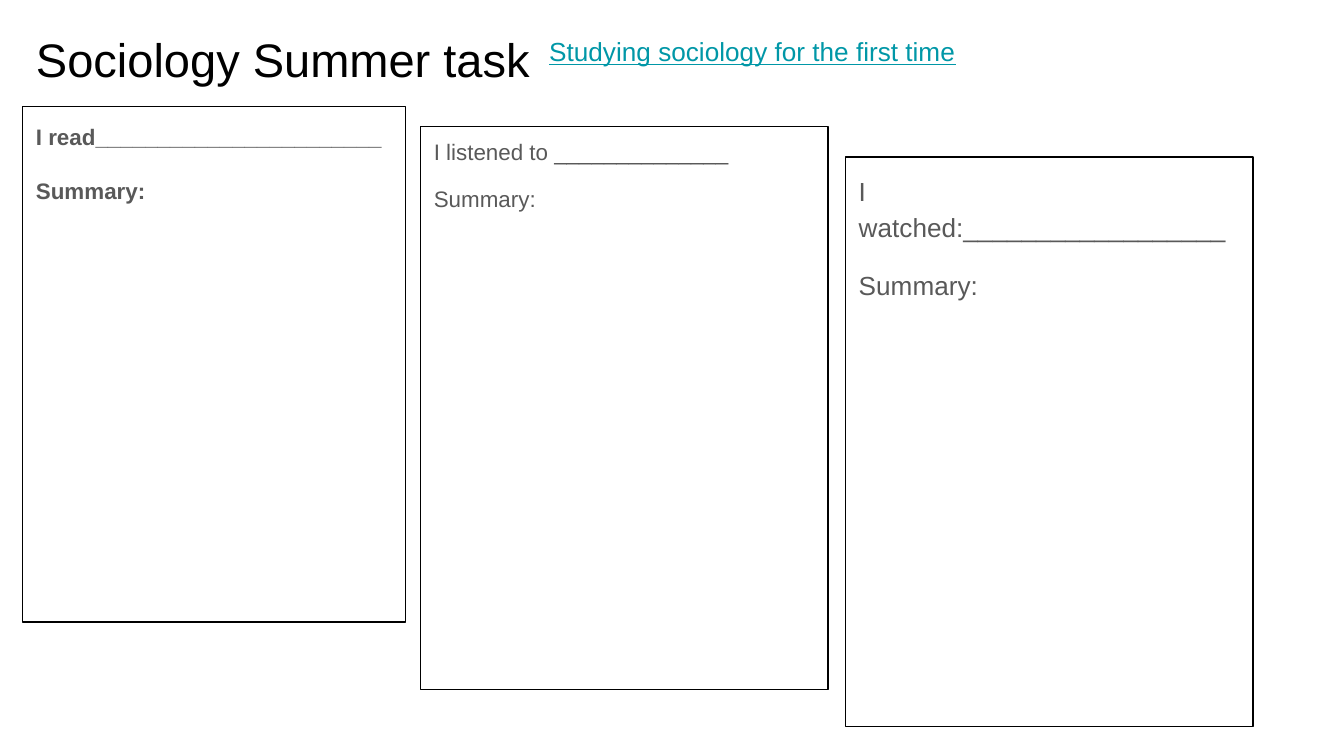
"""Build a summer task slide with three note boxes."""
from dataclasses import dataclass

from pptx import Presentation
from pptx.dml.color import RGBColor
from pptx.enum import shapes, text
from pptx.util import Cm, Pt


@dataclass(frozen=True)
class Theme:
    font: str = "Arial"
    black: str = "000000"
    grey: str = "595959"
    teal: str = "0097A7"
    white: str = "FFFFFF"
    title: float = 25.2
    large: float = 14
    small: float = 12
    gap: float = 12
    line: float = 0.75
    inset: float = 0.25


@dataclass(frozen=True)
class Box:
    left: float
    top: float
    width: float
    height: float


@dataclass(frozen=True)
class Note:
    box: Box
    prompt: str
    size: float
    pitch: float = 1.15
    after: float = 0
    bold: bool = False


THEME = Theme()
HEAD = Box(0.43, 0.33, 24.1, 0.79)
LINK = Box(10.13, 0.33, 11.89, 1.12)
NOTES = (
    Note(Box(0.43, 2.01, 7.24, 9.75), "I read" + "_" * 23,
         THEME.small, after=THEME.gap, bold=True),
    Note(Box(7.95, 2.39, 7.7, 10.64), "I listened to " + "_" * 14,
         THEME.small, pitch=0.95),
    Note(Box(15.98, 2.97, 7.7, 10.77), "I watched:" + "_" * 18, THEME.large),
)


def place(shape, box: Box) -> None:
    shape.left, shape.top = Cm(box.left), Cm(box.top)
    shape.width, shape.height = Cm(box.width), Cm(box.height)


def write(shape, words: str, size: float, color: str, bold: bool = False,
          line: bool = False, pitch: float = 1.0):
    frame = shape.text_frame
    frame.text = words
    frame.word_wrap = True
    frame.auto_size = text.MSO_AUTO_SIZE.NONE
    frame.vertical_anchor = text.MSO_ANCHOR.TOP
    frame.margin_left = frame.margin_right = Cm(THEME.inset)
    frame.margin_top = frame.margin_bottom = Cm(THEME.inset)
    for para in frame.paragraphs:
        para.alignment = text.PP_ALIGN.LEFT
        para.line_spacing = pitch
        para.space_before = para.space_after = Pt(0)
        for run in para.runs:
            font = run.font
            font.name, font.size = THEME.font, Pt(size)
            font.bold, font.underline = bold, line
            font.color.rgb = RGBColor.from_string(color)
    return frame


def draw(slide, note: Note) -> None:
    box = note.box
    shape = slide.shapes.add_shape(
        shapes.MSO_SHAPE.RECTANGLE, Cm(box.left), Cm(box.top),
        Cm(box.width), Cm(box.height))
    shape.shadow.inherit = False
    shape.fill.background()
    shape.line.color.rgb = RGBColor.from_string(THEME.black)
    shape.line.width = Pt(THEME.line)
    frame = write(shape, f"{note.prompt}\nSummary:", note.size, THEME.grey,
                  bold=note.bold, pitch=note.pitch)
    last = frame.paragraphs[-1]
    last.space_before, last.space_after = Pt(THEME.gap), Pt(note.after)


def main() -> None:
    deck = Presentation()
    deck.slide_width, deck.slide_height = Cm(25.4), Cm(14.29)
    slide = deck.slides.add_slide(deck.slide_layouts[5])
    slide.background.fill.solid()
    slide.background.fill.fore_color.rgb = RGBColor.from_string(THEME.white)

    head = slide.shapes.title
    place(head, HEAD)
    write(head, "Sociology Summer task", THEME.title, THEME.black)

    for note in NOTES:
        draw(slide, note)

    link = slide.shapes.add_textbox(
        Cm(LINK.left), Cm(LINK.top), Cm(LINK.width), Cm(LINK.height))
    frame = write(link, "Studying sociology for the first time", THEME.large,
                  THEME.teal, line=True, pitch=1.15)
    frame.paragraphs[0].space_after = Pt(THEME.gap)
    deck.save("out.pptx")


if __name__ == "__main__":
    main()
